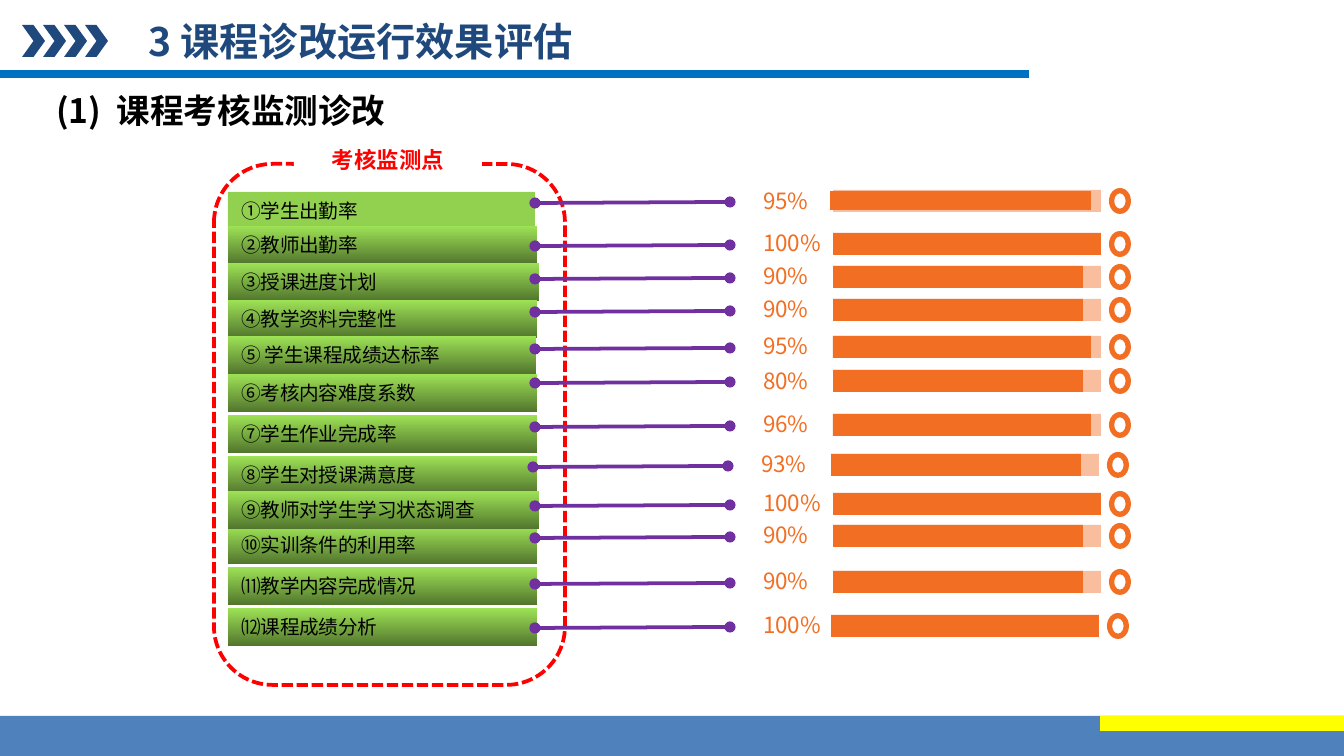
"""Build the slide on course assessment monitoring: checkpoints linked to progress bars."""
from dataclasses import dataclass

from lxml import etree
from pptx import Presentation
from pptx import util as u
from pptx.dml.color import RGBColor
from pptx.enum import dml, shapes, text
from pptx.oxml import ns

PX_PER_INCH = 134.4
FONT = "Noto Sans CJK SC"
BLACK = RGBColor(0x00, 0x00, 0x00)
WHITE = RGBColor(0xFF, 0xFF, 0xFF)
RED = RGBColor(0xFF, 0x00, 0x00)
NAVY = RGBColor(0x1F, 0x49, 0x7D)
BLUE = RGBColor(0x00, 0x70, 0xC0)
FOOTER_BLUE = RGBColor(0x4F, 0x81, 0xBD)
YELLOW = RGBColor(0xFF, 0xFF, 0x00)
GREEN = RGBColor(0x92, 0xD0, 0x50)
GREEN_TOP = RGBColor(0x9E, 0xE2, 0x56)
GREEN_BOTTOM = RGBColor(0x52, 0x76, 0x2D)
PURPLE = RGBColor(0x70, 0x30, 0xA0)
ORANGE = RGBColor(0xF2, 0x6E, 0x22)
PEACH = RGBColor(0xF9, 0xBE, 0x9D)

LABEL_X, LABEL_H = 228, 38
LINK_X1, LINK_X2 = 730, 535
PERCENT_X = 750
BAR_X, BAR_W, BAR_H = 833, 268, 22
RING_X = 1109


@dataclass(frozen=True)
class Checkpoint:
    """One monitored item with its label, percentage and bar."""
    label: str
    label_top: int
    percent: str
    bar_top: int
    fill_w: int = BAR_W
    label_w: int = 309
    link_dx: int = 0
    bar_dx: int = 0
    fill_dx: int = 0
    fill_h: int = BAR_H
    flat: bool = False


CHECKPOINTS = [
    Checkpoint("①学生出勤率", 192, "95%", 190, 261, 307, fill_dx=-3, fill_h=19, flat=True),
    Checkpoint("②教师出勤率", 226, "100%", 233),
    Checkpoint("③授课进度计划", 263, "90%", 266, 250, 311),
    Checkpoint("④教学资料完整性", 300, "90%", 299, 250),
    Checkpoint("⑤ 学生课程成绩达标率", 336, "95%", 336, 258, 308),
    Checkpoint("⑥考核内容难度系数", 374, "80%", 370, 250),
    Checkpoint("⑦学生作业完成率", 415, "96%", 414, 258),
    Checkpoint("⑧学生对授课满意度", 456, "93%", 454, 250, link_dx=-2, bar_dx=-2),
    Checkpoint("⑩实训条件的利用率", 526, "90%", 525, 250),
    Checkpoint("⑾教学内容完成情况", 567, "90%", 571, 250),
    Checkpoint("⑿课程成绩分析", 608, "100%", 615, bar_dx=-2),
    Checkpoint("⑨教师对学生学习状态调查", 491, "100%", 493, label_w=311),
]


def px(n: int) -> u.Emu:
    """Turn px into EMU."""
    return u.Emu(round(n * 914400 / PX_PER_INCH))


def add_box(s, kind, x: int, y: int, w: int, h: int, color: RGBColor | None):
    """Draw a preset shape without outline or shadow."""
    sp = s.shapes.add_shape(kind, px(x), px(y), px(w), px(h))
    sp.shadow.inherit = False
    sp.line.fill.background()
    if color is None:
        sp.fill.background()
    else:
        sp.fill.solid()
        sp.fill.fore_color.rgb = color
    return sp


def add_rect(s, x: int, y: int, w: int, h: int, color: RGBColor):
    """Draw a filled rectangle."""
    return add_box(s, shapes.MSO_SHAPE.RECTANGLE, x, y, w, h, color)


def add_textbox(s, x: int, y: int, w: int, h: int):
    """Draw an empty text box."""
    return s.shapes.add_textbox(px(x), px(y), px(w), px(h))


def set_text(sp, words: str, size: float, color: RGBColor, bold: bool = False,
             align=text.PP_ALIGN.LEFT) -> None:
    """Write one vertically centred paragraph into a shape."""
    tf = sp.text_frame
    tf.text = words
    tf.word_wrap = True
    tf.vertical_anchor = text.MSO_ANCHOR.MIDDLE
    p = tf.paragraphs[0]
    p.alignment = align
    r = p.runs[0]
    r.font.name = FONT
    r.font.size = u.Pt(size)
    r.font.bold = bold
    r.font.color.rgb = color
    ea = etree.SubElement(r.font._element, ns.qn("a:ea"))
    ea.set("typeface", FONT)


def add_line(s, x1: int, y1: int, x2: int, y2: int, color: RGBColor, width: int,
             dots: bool = False) -> None:
    """Draw a straight line, with round ends if asked."""
    cx = s.shapes.add_connector(shapes.MSO_CONNECTOR.STRAIGHT, px(x1), px(y1), px(x2), px(y2))
    cx.line.color.rgb = color
    cx.line.width = u.Pt(width)
    if dots:
        ln = cx.line._get_or_add_ln()
        for end in ("a:headEnd", "a:tailEnd"):
            etree.SubElement(ln, ns.qn(end)).set("type", "oval")
    etree.SubElement(cx._element.spPr, ns.qn("a:effectLst"))


def add_label(s, c: Checkpoint) -> None:
    """Draw the green label of a checkpoint."""
    sp = add_rect(s, LABEL_X, c.label_top, c.label_w, LABEL_H, GREEN)
    if not c.flat:
        sp.fill.gradient()
        sp.fill.gradient_angle = 270
        for stop, color, at in zip(sp.fill.gradient_stops, (GREEN_TOP, GREEN_BOTTOM), (0, 1)):
            stop.color.rgb = color
            stop.position = at
    set_text(sp, c.label, 10.5, BLACK)


def add_meter(s, c: Checkpoint) -> None:
    """Draw the link, percentage, bar and ring of a checkpoint."""
    x, y = BAR_X + c.bar_dx, c.bar_top
    ring = add_box(s, shapes.MSO_SHAPE.DONUT, RING_X + c.bar_dx, y - 2, 22, 26, ORANGE)
    ring.adjustments[0] = 0.24
    if c.fill_w < BAR_W:
        add_rect(s, x, y, BAR_W, BAR_H, PEACH)
    add_rect(s, x + c.fill_dx, y + (BAR_H - c.fill_h) // 2, c.fill_w, c.fill_h, ORANGE)
    set_text(add_textbox(s, PERCENT_X + c.link_dx, y - 10, 94, 40), c.percent, 12, ORANGE)
    add_line(s, LINK_X1 + c.link_dx, y + 12, LINK_X2 + c.link_dx, y + 13, PURPLE, 2, dots=True)


def add_frame(s) -> None:
    """Draw the dashed frame and its caption."""
    sp = add_box(s, shapes.MSO_SHAPE.ROUNDED_RECTANGLE, 214, 164, 351, 521, None)
    sp.line.color.rgb = RED
    sp.line.width = u.Pt(2)
    sp.line.dash_style = dml.MSO_LINE.SQUARE_DOT
    ln = sp.line._get_or_add_ln()
    ln.find(ns.qn("a:prstDash")).set("val", "sysDash")
    caption = add_rect(s, 294, 140, 188, 40, WHITE)
    set_text(caption, "考核监测点", 12, RED, True, text.PP_ALIGN.CENTER)


def add_header(s) -> None:
    """Draw the title, its chevrons and rule, and the section heading."""
    set_text(add_textbox(s, 43, 83, 1284, 54), "(1)  课程考核监测诊改", 18, BLACK, True)
    title = add_textbox(s, 106, 14, 509, 54)
    set_text(title, "3 课程诊改运行效果评估", 21, NAVY, True, text.PP_ALIGN.CENTER)
    tf = title.text_frame
    tf.margin_left = tf.margin_right = px(9)
    tf.margin_top = tf.margin_bottom = px(5)
    for i in range(4):
        add_box(s, shapes.MSO_SHAPE.CHEVRON, 22 + 21 * i, 25, 23, 32, NAVY)
    add_line(s, 0, 74, 1029, 74, BLUE, 4)


def main() -> None:
    """Build and save the slide."""
    prs = Presentation()
    prs.slide_width, prs.slide_height = px(1344), px(756)
    s = prs.slides.add_slide(prs.slide_layouts[6])
    for c in CHECKPOINTS:
        add_label(s, c)
    add_frame(s)
    for c in CHECKPOINTS:
        add_meter(s, c)
    add_rect(s, 0, 716, 1344, 40, FOOTER_BLUE)
    add_rect(s, 1100, 716, 244, 15, YELLOW)
    add_header(s)
    prs.save("out.pptx")


if __name__ == "__main__":
    main()
